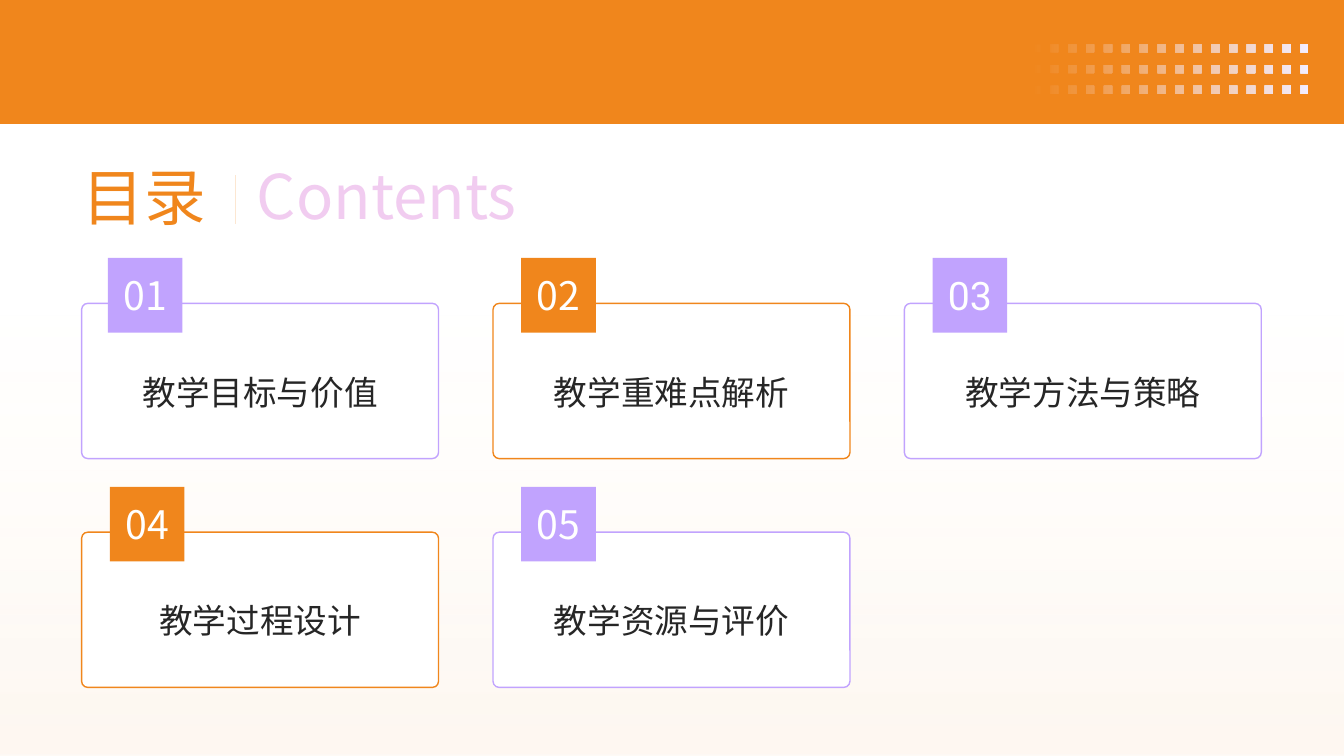
import pptx
import pptx.dml.color
import pptx.enum.shapes
import pptx.enum.text
import pptx.oxml
import pptx.oxml.ns
import pptx.util
from lxml import etree

Inches, Pt = pptx.util.Inches, pptx.util.Pt
RGBColor = pptx.dml.color.RGBColor
SHAPE = pptx.enum.shapes.MSO_SHAPE
ANCHOR = pptx.enum.text.MSO_ANCHOR
ALIGN = pptx.enum.text.PP_ALIGN
qn = pptx.oxml.ns.qn

ORANGE = RGBColor(0xF0, 0x86, 0x1C)
PURPLE = RGBColor(0xC1, 0xA3, 0xFE)
PINK = RGBColor(0xF1, 0xCC, 0xF0)
CREAM = RGBColor(0xFC, 0xE7, 0xD2)
PEACH = RGBColor(0xF9, 0xCF, 0xA4)
LILAC = RGBColor(0xF3, 0xED, 0xFF)
DARK = RGBColor(0x26, 0x26, 0x26)
WHITE = RGBColor(0xFF, 0xFF, 0xFF)

CJK = "Noto Sans CJK SC"
TITLE, SUBTITLE = "目录", "Contents"
# number, number font, topic, colour, inset of the number badge
TOPICS = [
    ("01", CJK, "教学目标与价值", PURPLE, 0.26),
    ("02", CJK, "教学重难点解析", ORANGE, 0.28),
    ("03", "Roboto", "教学方法与策略", PURPLE, 0.28),
    ("04", CJK, "教学过程设计", ORANGE, 0.28),
    ("05", CJK, "教学资源与评价", PURPLE, 0.28),
]
COLUMNS = 3
CARD_LEFT, CARD_TOP, CARD_W, CARD_H = 0.81, 3.01, 3.54, 1.54
COLUMN_STEP, ROW_STEP = 4.08, 2.27
BADGE, BADGE_RISE = 0.74, 0.45
LABEL_DROP, LABEL_H = 0.32, 1.11
DOT_COLS, DOT_ROWS, DOT = 16, 3, 0.08
DOT_LEFT, DOT_TOP, DOT_STEP_X, DOT_STEP_Y = 10.24, 0.44, 2.66 / 15, 0.41 / 2


def write(shape, text, size, color, font=CJK, align=ALIGN.CENTER, anchor=ANCHOR.MIDDLE):
    tf = shape.text_frame
    tf.word_wrap = True
    tf.auto_size = pptx.enum.text.MSO_AUTO_SIZE.NONE
    tf.vertical_anchor = anchor
    p = tf.paragraphs[0]
    p.alignment = align
    r = p.add_run()
    r.text = text
    r.font.size = Pt(size)
    r.font.name = font
    r.font.color.rgb = color
    ea = etree.SubElement(r.font._element, qn("a:ea"))
    ea.set("typeface", font)


def add_text(left, top, width, height, *args, **kwargs):
    box = s.shapes.add_textbox(Inches(left), Inches(top), Inches(width), Inches(height))
    write(box, *args, **kwargs)


def add_block(kind, left, top, width, height, fill, line=None):
    sp = s.shapes.add_shape(kind, Inches(left), Inches(top), Inches(width), Inches(height))
    sp.shadow.inherit = False
    sp.fill.solid()
    sp.fill.fore_color.rgb = fill
    if line is None:
        sp.line.fill.background()
    else:
        sp.line.color.rgb = line
        sp.line.width = Pt(1)
    return sp


def set_gradient(sp, stops, angle):
    """Fill with (position %, colour, opacity %) stops; angle runs clockwise."""
    sp.fill.gradient()
    grad = sp._element.spPr.find(qn("a:gradFill"))
    gs_list = grad.find(qn("a:gsLst"))
    for old in list(gs_list):
        gs_list.remove(old)
    for position, color, opacity in stops:
        gs = etree.SubElement(gs_list, qn("a:gs"), pos=str(position * 1000))
        clr = etree.SubElement(gs, qn("a:srgbClr"), val=str(color))
        if opacity < 100:
            etree.SubElement(clr, qn("a:alpha"), val=str(opacity * 1000))
    grad.find(qn("a:lin")).set("ang", str(angle * 60000))


def add_dot_grid():
    builder = None
    for row in range(DOT_ROWS):
        for col in range(DOT_COLS):
            x = Inches(DOT_LEFT + col * DOT_STEP_X)
            y = Inches(DOT_TOP + row * DOT_STEP_Y)
            d = Inches(DOT)
            if builder is None:
                builder = s.shapes.build_freeform(x, y)
            else:
                builder.move_to(x, y)
            builder.add_line_segments([(x + d, y), (x + d, y + d), (x, y + d)], close=True)
    sp = builder.convert_to_shape()
    sp.shadow.inherit = False
    sp.line.fill.background()
    set_gradient(sp, [(0, ORANGE, 100), (100, LILAC, 100)], 0)


prs = pptx.Presentation()
prs.slide_width, prs.slide_height = Inches(13.33), Inches(7.5)
s = prs.slides.add_slide(prs.slide_layouts[5])

backdrop = add_block(SHAPE.RECTANGLE, -0.04, 0, 13.42, 7.5, WHITE)
set_gradient(backdrop, [(41, CREAM, 0), (97, PEACH, 15)], 90)
add_block(SHAPE.RECTANGLE, 0, -0.01, 13.35, 1.24, ORANGE)
add_dot_grid()

title = s.shapes.title
title.left, title.top = Inches(0.72), Inches(1.53)
title.width, title.height = Inches(2.22), Inches(1.21)
write(title, TITLE, 44, ORANGE, align=ALIGN.LEFT, anchor=ANCHOR.TOP)
add_text(2.45, 1.52, 6.85, 0.82, SUBTITLE, 44, PINK, align=ALIGN.LEFT, anchor=ANCHOR.TOP)

divider = s.shapes.add_connector(pptx.enum.shapes.MSO_CONNECTOR.STRAIGHT,
                                 Inches(2.33), Inches(1.74), Inches(2.33), Inches(2.22))
divider.line.color.rgb = CREAM
divider.line.width = Pt(0.5)
etree.SubElement(divider._element.spPr, qn("a:effectLst"))

for i, (number, font, topic, color, inset) in enumerate(TOPICS):
    row, col = divmod(i, COLUMNS)
    left = CARD_LEFT + col * COLUMN_STEP
    top = CARD_TOP + row * ROW_STEP
    card = add_block(SHAPE.ROUNDED_RECTANGLE, left, top, CARD_W, CARD_H, WHITE, color)
    card.adjustments[0] = 0.04
    add_text(left, top + LABEL_DROP, CARD_W, LABEL_H, topic, 24, DARK)
    badge = add_block(SHAPE.RECTANGLE, left + inset, top - BADGE_RISE, BADGE, BADGE, color)
    write(badge, number, 28, WHITE, font)

prs.save("out.pptx")
